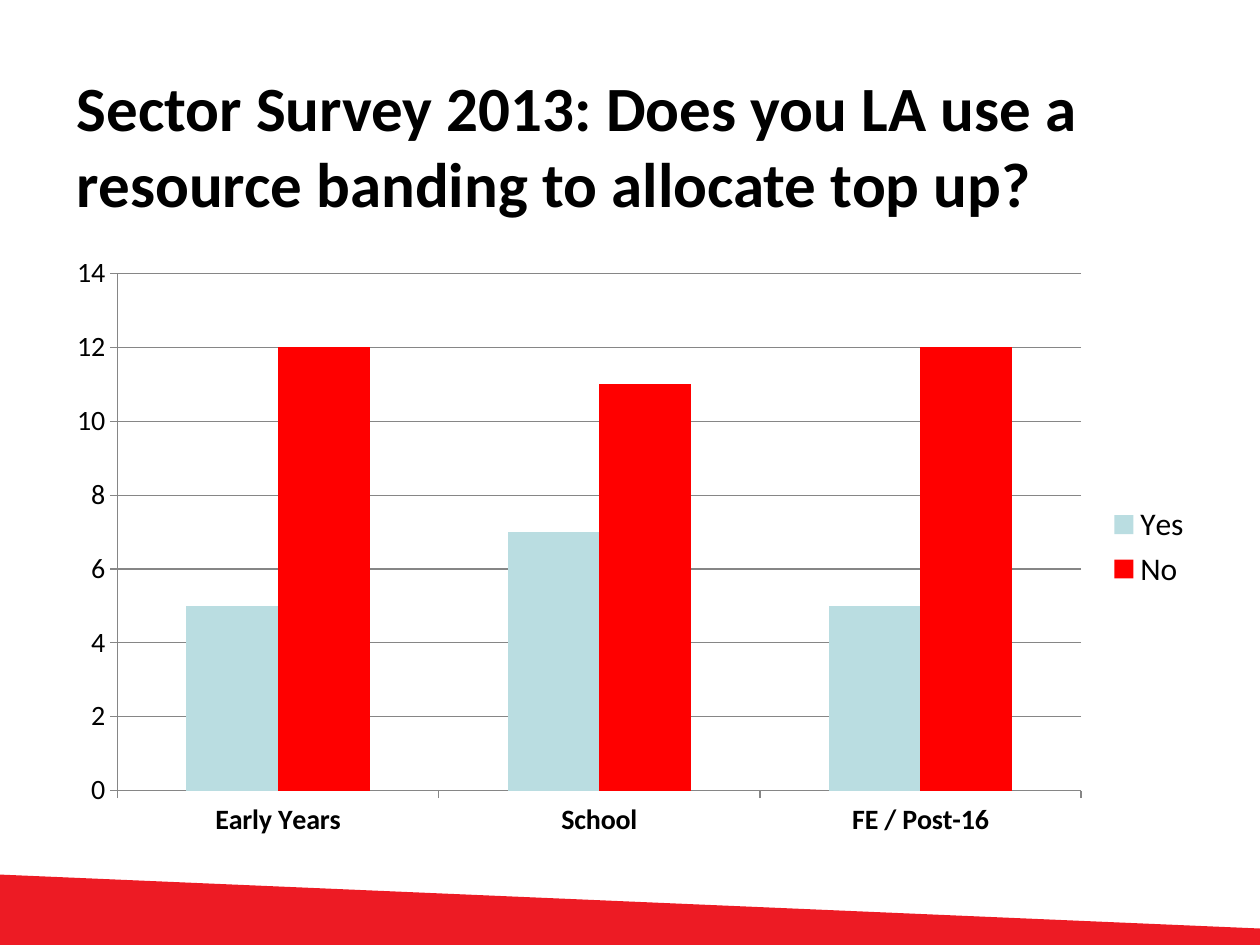
from dataclasses import dataclass

from pptx import Presentation
from pptx.chart.data import CategoryChartData
from pptx.dml.color import RGBColor
from pptx.enum.chart import XL_CHART_TYPE, XL_LEGEND_POSITION, XL_TICK_MARK
from pptx.enum.text import MSO_ANCHOR, MSO_AUTO_SIZE, PP_ALIGN
from pptx.util import Inches, Pt


@dataclass(frozen=True)
class Theme:
    """Colours, font and type sizes of the slide."""
    font: str = "Calibri"
    text: RGBColor = RGBColor(0, 0, 0)
    band: RGBColor = RGBColor(0xED, 0x1B, 0x24)
    rule: RGBColor = RGBColor(0x86, 0x86, 0x86)
    yes: RGBColor = RGBColor(0xBA, 0xDD, 0xE1)
    no: RGBColor = RGBColor(0xFF, 0, 0)
    title_size: Pt = Pt(36)
    axis_size: Pt = Pt(16)
    legend_size: Pt = Pt(18)


THEME = Theme()
WIDTH, HEIGHT = Inches(10), Inches(7.5)
CATEGORIES = ["Early Years", "School", "FE / Post-16"]
SERIES = [("Yes", (5, 7, 5), THEME.yes), ("No", (12, 11, 12), THEME.no)]


def inch_box(left, top, width, height):
    """Return a box given in inches as a tuple of lengths."""
    return tuple(Inches(value) for value in (left, top, width, height))


def style_font(font, size, bold=False):
    """Apply the theme's typeface and text colour."""
    font.name, font.size, font.bold = THEME.font, size, bold
    font.color.rgb = THEME.text


def add_footer_band(slide, box):
    """Draw the sloping band that fills the foot of the slide."""
    left, top, width, height = box
    corners = [(0, 0), (0, 0.97), (1, 1), (1, 0.73)]
    points = [(left + int(x * width), top + int(y * height)) for x, y in corners]
    builder = slide.shapes.build_freeform(*points[0])
    builder.add_line_segments(points[1:], close=True)
    band = builder.convert_to_shape()
    band.shadow.inherit = False
    band.fill.solid()
    band.fill.fore_color.rgb = THEME.band
    band.line.fill.background()


def add_title(slide, box, text):
    """Place and format the title placeholder."""
    title = slide.shapes.title
    title.left, title.top, title.width, title.height = box
    frame = title.text_frame
    frame.text = text
    frame.word_wrap = True
    frame.auto_size = MSO_AUTO_SIZE.NONE
    frame.vertical_anchor = MSO_ANCHOR.MIDDLE
    paragraph = frame.paragraphs[0]
    paragraph.alignment = PP_ALIGN.LEFT
    style_font(paragraph.font, THEME.title_size, bold=True)


def style_axis(axis, bold):
    """Format the labels, ticks and line of an axis."""
    style_font(axis.tick_labels.font, THEME.axis_size, bold)
    axis.major_tick_mark = XL_TICK_MARK.OUTSIDE
    axis.minor_tick_mark = XL_TICK_MARK.NONE
    axis.format.line.color.rgb = THEME.rule
    axis.format.line.width = Pt(0.75)


def add_survey_chart(slide, box):
    """Add the clustered columns of survey answers."""
    data = CategoryChartData()
    data.categories = CATEGORIES
    for name, values, _ in SERIES:
        data.add_series(name, values)
    chart = slide.shapes.add_chart(XL_CHART_TYPE.COLUMN_CLUSTERED, *box, data).chart
    chart.has_title = False
    style_font(chart.font, THEME.axis_size)

    style_axis(chart.category_axis, bold=True)
    style_axis(chart.value_axis, bold=False)
    chart.value_axis.minimum_scale, chart.value_axis.maximum_scale = 0, 14
    chart.value_axis.major_unit = 2
    gridlines = chart.value_axis.major_gridlines.format.line
    gridlines.color.rgb = THEME.rule
    gridlines.width = Pt(0.75)

    plot = chart.plots[0]
    plot.gap_width, plot.overlap = 150, 0
    plot.vary_by_categories = False
    for series, (_, _, color) in zip(plot.series, SERIES):
        series.format.fill.solid()
        series.format.fill.fore_color.rgb = color

    chart.has_legend = True
    chart.legend.position = XL_LEGEND_POSITION.RIGHT
    chart.legend.include_in_layout = False
    style_font(chart.legend.font, THEME.legend_size)


def main():
    """Build and save the survey slide."""
    presentation = Presentation()
    presentation.slide_width, presentation.slide_height = WIDTH, HEIGHT
    slide = presentation.slides.add_slide(presentation.slide_layouts[5])
    add_footer_band(slide, inch_box(-0.02, 6.94, 10.06, 0.59))
    add_title(slide, inch_box(0.51, 0.59, 9.06, 1.11),
              "Sector Survey 2013: Does you LA use a resource banding to allocate top up?")
    add_survey_chart(slide, inch_box(0.43, 1.94, 9.13, 4.8))
    presentation.save("out.pptx")


if __name__ == "__main__":
    main()
